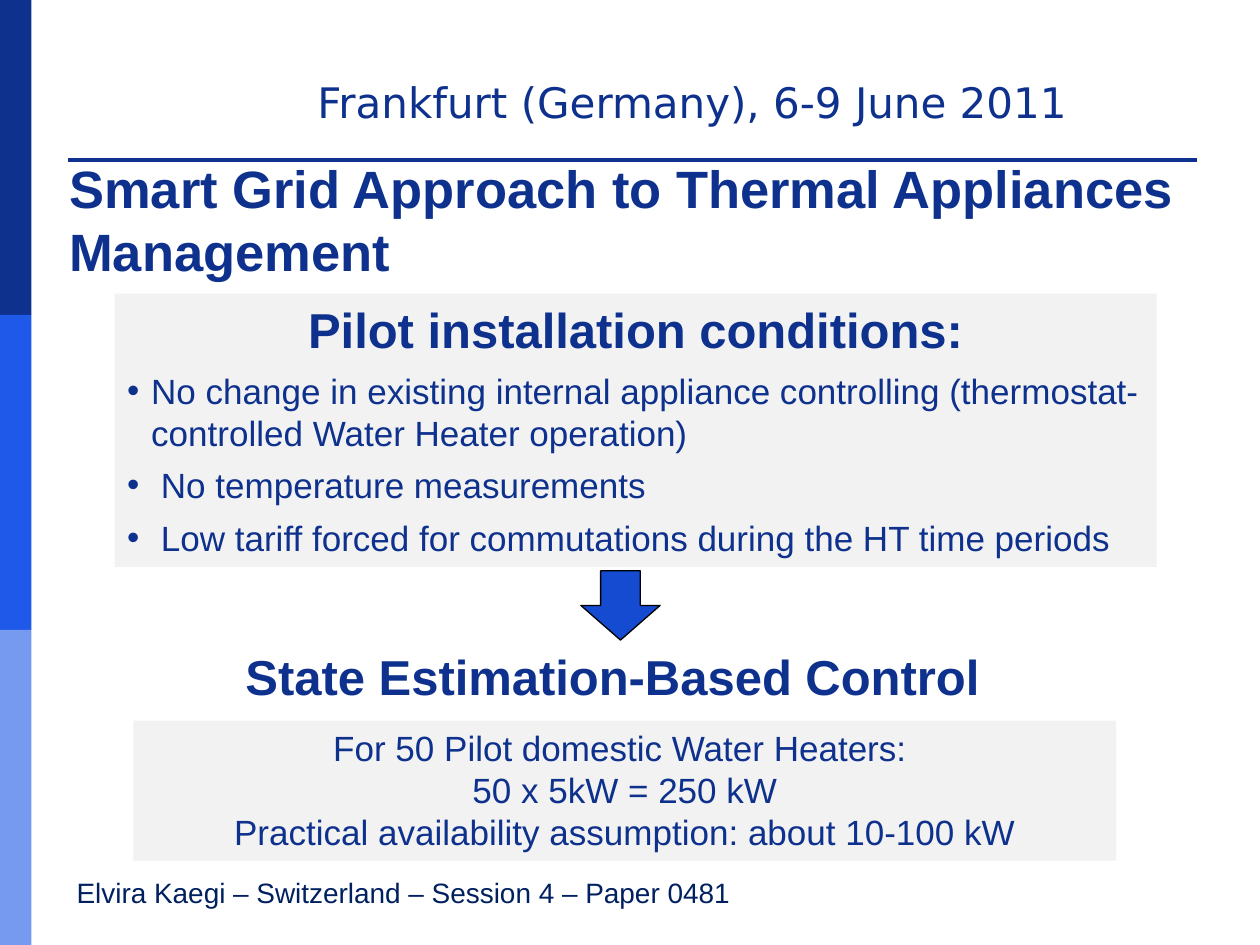
import pptx
import pptx.util
import pptx.dml.color
import pptx.enum.shapes
import pptx.enum.text
from lxml import etree
from pptx.oxml.ns import qn
from pptx.util import Inches

COLORS = {
    "navy": "0E318D",
    "blue": "1F59E9",
    "light": "779AF1",
    "arrow": "154BD1",
    "panel": "F2F2F2",
    "footer": "002060",
    "black": "000000",
}
SHAPE = pptx.enum.shapes.MSO_SHAPE
ALIGN = pptx.enum.text.PP_ALIGN
ANCHOR = pptx.enum.text.MSO_ANCHOR


def rgb(name):
    return pptx.dml.color.RGBColor.from_string(COLORS[name])


def write(p, text, size=20, bold=False, color="navy", font="Arial",
          align=ALIGN.LEFT, after=0, bullet=None):
    """Fill a paragraph; bullet=None removes any inherited bullet."""
    pPr = p._p.get_or_add_pPr()
    indent = Inches(0.19) if bullet else 0
    pPr.set("marL", str(indent))
    pPr.set("indent", str(-indent))
    if bullet:
        etree.SubElement(pPr, qn("a:buFont"), typeface="Arial")
        etree.SubElement(pPr, qn("a:buChar"), char=bullet)
    else:
        etree.SubElement(pPr, qn("a:buNone"))
    p.alignment = align
    p.space_before = pptx.util.Pt(0)
    p.space_after = pptx.util.Pt(after)
    r = p.add_run()
    r.text = text
    r.font.size = pptx.util.Pt(size)
    r.font.bold = bold
    r.font.name = font
    r.font.color.rgb = rgb(color)


prs = pptx.Presentation()
prs.slide_width, prs.slide_height = Inches(10), Inches(7.5)
s = prs.slides.add_slide(prs.slide_layouts[1])

# Side stripe
for i, color in enumerate(("navy", "blue", "light")):
    sp = s.shapes.add_shape(SHAPE.RECTANGLE, 0, Inches(2.5 * i), Inches(0.25), Inches(2.5))
    sp.shadow.inherit = False
    sp.fill.solid()
    sp.fill.fore_color.rgb = rgb(color)
    sp.line.fill.background()

# Header table: one empty cell with a bottom border
table = s.shapes.add_table(1, 1, Inches(0.54), Inches(1.07), Inches(8.96), Inches(0.2)).table
table.first_row = table.horz_banding = False
cell = table.cell(0, 0)
cell.margin_left = cell.margin_right = cell.margin_top = cell.margin_bottom = 0
etree.SubElement(cell.text_frame.paragraphs[0]._p, qn("a:endParaRPr"), sz="800")
tcPr = cell._tc.get_or_add_tcPr()
for side in ("lnL", "lnR", "lnT"):
    etree.SubElement(etree.SubElement(tcPr, qn("a:" + side)), qn("a:noFill"))
border = etree.SubElement(tcPr, qn("a:lnB"), w=str(pptx.util.Pt(2.25)))
etree.SubElement(etree.SubElement(border, qn("a:solidFill")), qn("a:srgbClr"), val=COLORS["navy"])
cell.fill.background()

# Title
title = s.shapes.title
title.left, title.top, title.width, title.height = (Inches(v) for v in (0.45, 1.31, 9, 0.86))
tf = title.text_frame
tf.auto_size = pptx.enum.text.MSO_AUTO_SIZE.NONE
tf.vertical_anchor = ANCHOR.MIDDLE
write(tf.paragraphs[0], "Smart Grid Approach to Thermal Appliances Management", size=30, bold=True)

# Pilot conditions
body = s.placeholders[1]
body.left, body.top, body.width, body.height = (Inches(v) for v in (0.91, 2.33, 8.27, 2.17))
body.fill.solid()
body.fill.fore_color.rgb = rgb("panel")
tf = body.text_frame
tf.auto_size = pptx.enum.text.MSO_AUTO_SIZE.NONE
tf.vertical_anchor = ANCHOR.TOP
write(tf.paragraphs[0], "Pilot installation conditions:", size=28, bold=True,
      align=ALIGN.CENTER, after=6)
for text in (
    "No change in existing internal appliance controlling (thermostat-controlled Water Heater operation)",
    " No temperature measurements",
    " Low tariff forced for commutations during the HT time periods",
):
    write(tf.add_paragraph(), text, after=6, bullet="•")

# Availability estimate
panel = s.shapes.add_shape(SHAPE.RECTANGLE, Inches(1.06), Inches(5.72), Inches(7.8), Inches(1.11))
panel.shadow.inherit = False
panel.fill.solid()
panel.fill.fore_color.rgb = rgb("panel")
panel.line.fill.background()
tf = panel.text_frame
tf.word_wrap = True
tf.vertical_anchor = ANCHOR.TOP
for i, text in enumerate((
    "For 50 Pilot domestic Water Heaters: ",
    "50 x 5kW = 250 kW",
    "Practical availability assumption: about 10-100 kW",
)):
    write(tf.add_paragraph() if i else tf.paragraphs[0], text, align=ALIGN.CENTER)

# Arrow from conditions to control
arrow = s.shapes.add_shape(SHAPE.DOWN_ARROW, Inches(4.61), Inches(4.53), Inches(0.63), Inches(0.55))
arrow.shadow.inherit = False
arrow.fill.solid()
arrow.fill.fore_color.rgb = rgb("arrow")
arrow.line.color.rgb = rgb("black")
arrow.line.width = pptx.util.Pt(0.75)

# Single-line texts
for box, text, style in (
    ((2.42, 0.56, 6.58, 0.5), "Frankfurt (Germany), 6-9 June 2011",
     dict(size=24, font="DejaVu Sans")),
    ((1.85, 5.08, 6.77, 0.57), "State Estimation-Based Control", dict(size=28, bold=True)),
    ((0.51, 6.9, 7.88, 0.37), "Elvira Kaegi – Switzerland – Session 4 – Paper 0481",
     dict(size=16, color="footer")),
):
    tf = s.shapes.add_textbox(*(Inches(v) for v in box)).text_frame
    tf.word_wrap = True
    write(tf.paragraphs[0], text, **style)

prs.save("out.pptx")
